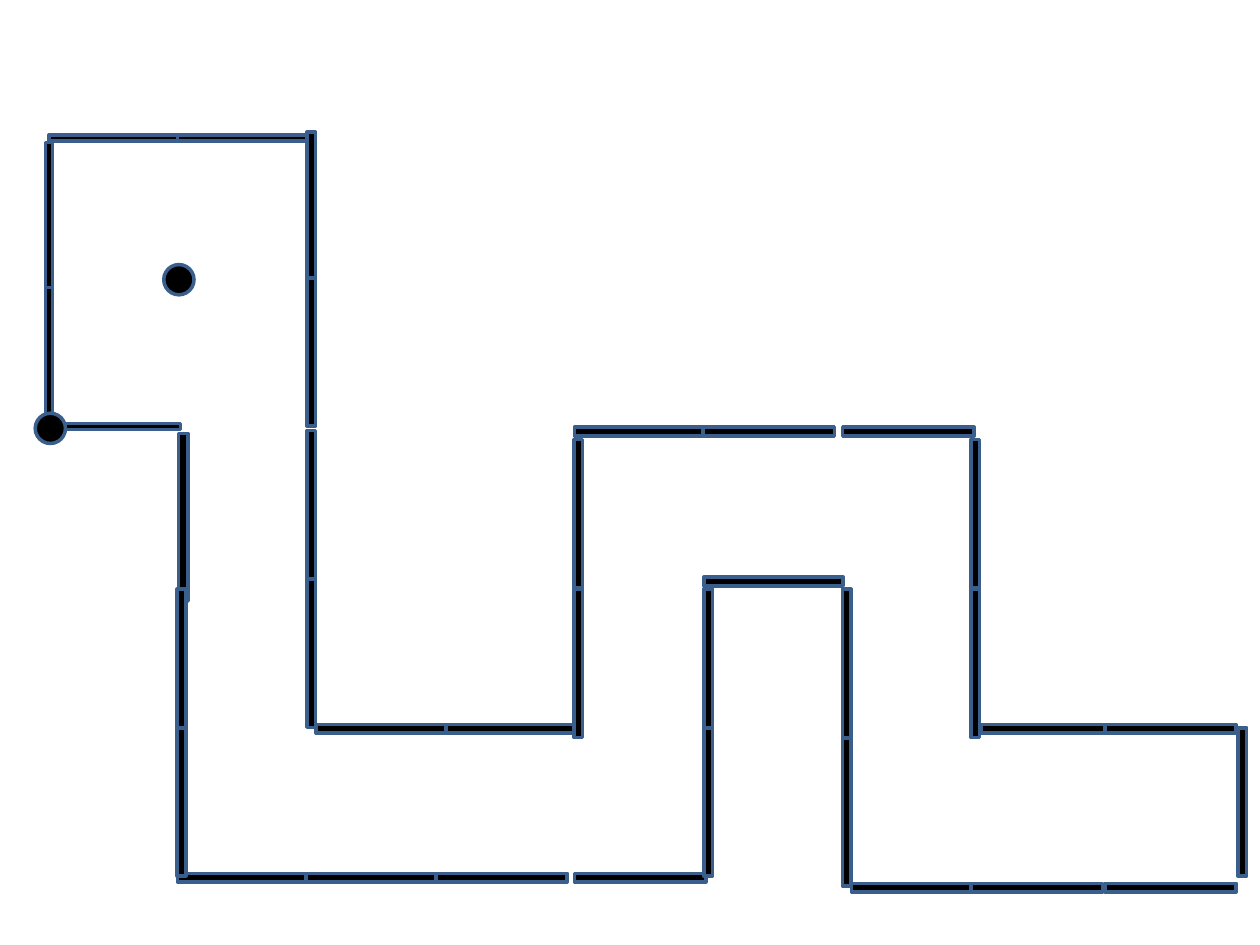
import pptx
import pptx.util
import pptx.dml.color
import pptx.enum.shapes

Inches = pptx.util.Inches
SHAPES = pptx.enum.shapes.MSO_SHAPE
COLORS = {"fill": "000000", "outline": "3A5F8C"}

BAR_LENGTH, COLUMN_LENGTH, BAR_HEIGHT = 1.42, 1.6, 0.29
DOT_SIZE = 0.24

# Rows: top, height, length, left edges
ROWS = [
    (0.99, 0.21, BAR_LENGTH, [0.2, 1.22]),
    (3.28, 0.21, BAR_LENGTH, [0.2]),
    (3.28, BAR_HEIGHT, BAR_LENGTH, [4.37, 5.39, 6.5]),
    (4.46, 0.31, 1.5, [5.39]),
    (5.64, BAR_HEIGHT, BAR_LENGTH, [2.32, 3.35, 7.6, 8.58]),
    (6.82, BAR_HEIGHT, BAR_LENGTH, [1.22, 2.24, 3.27, 4.37]),
    (6.9, BAR_HEIGHT, BAR_LENGTH, [6.57, 7.52, 8.58]),
]
# Columns: unrotated left, height, length, unrotated top edges
COLUMNS = [
    (-0.41, 0.24, COLUMN_LENGTH, [1.6, 2.75]),
    (0.55, 0.31, 1.81, [3.95]),
    (0.64, BAR_HEIGHT, COLUMN_LENGTH, [5.12, 6.22]),
    (1.67, BAR_HEIGHT, COLUMN_LENGTH, [1.49, 2.65, 3.86, 5.04]),
    (3.79, BAR_HEIGHT, COLUMN_LENGTH, [3.93, 5.12]),
    (4.82, BAR_HEIGHT, COLUMN_LENGTH, [5.12, 6.22]),
    (5.92, BAR_HEIGHT, COLUMN_LENGTH, [5.12, 6.3]),
    (6.94, BAR_HEIGHT, COLUMN_LENGTH, [3.93, 5.12]),
    (9.06, BAR_HEIGHT, COLUMN_LENGTH, [6.22]),
]


def add_outlined_shape(shapes, kind, left, top, width, height):
    """Add a black preset shape with a blue outline."""
    shape = shapes.add_shape(kind, Inches(left), Inches(top), Inches(width), Inches(height))
    shape.shadow.inherit = False
    shape.fill.solid()
    shape.fill.fore_color.rgb = pptx.dml.color.RGBColor.from_string(COLORS["fill"])
    shape.line.color.rgb = pptx.dml.color.RGBColor.from_string(COLORS["outline"])
    shape.line.width = pptx.util.Pt(2)
    return shape


def add_bar(shapes, left, top, length, height, rotation=0):
    """Add one straight piece of the outline."""
    bar = add_outlined_shape(shapes, SHAPES.MATH_MINUS, left, top, length, height)
    bar.rotation = rotation


def add_dot(shapes, left, top):
    """Add a round dot."""
    add_outlined_shape(shapes, SHAPES.FLOWCHART_CONNECTOR, left, top, DOT_SIZE, DOT_SIZE)


def main():
    """Build the slide with the snake outline and save it."""
    presentation = pptx.Presentation()
    presentation.slide_width = Inches(10)
    presentation.slide_height = Inches(7.5)
    slide = presentation.slides.add_slide(presentation.slide_layouts[6])
    snake = slide.shapes.add_group_shape()
    for top, height, length, lefts in ROWS:
        for left in lefts:
            add_bar(snake.shapes, left, top, length, height)
    for left, height, length, tops in COLUMNS:
        for top in tops:
            add_bar(snake.shapes, left, top, length, height, 90)
    add_dot(snake.shapes, 0.28, 3.28)
    add_dot(slide.shapes, 1.3, 2.1)
    presentation.save("out.pptx")


if __name__ == "__main__":
    main()
